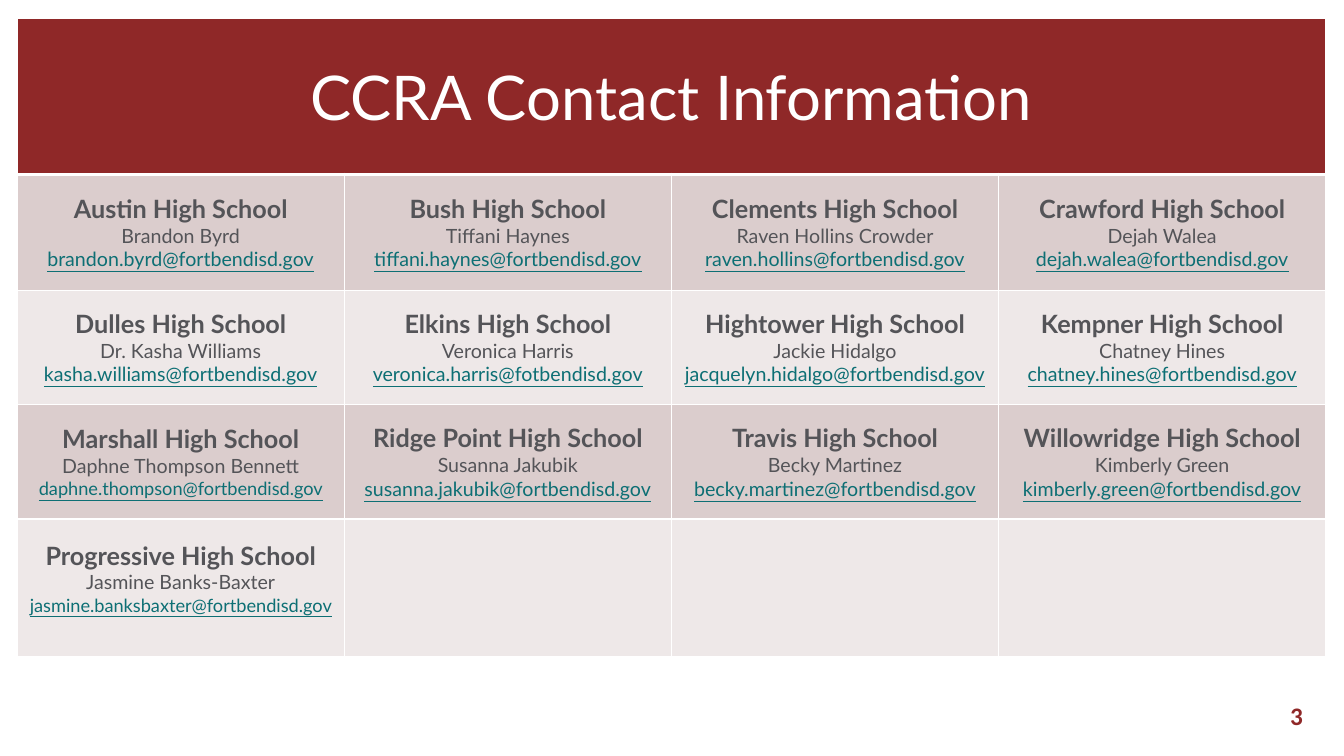
from lxml import etree
from pptx import Presentation
from pptx.dml.color import RGBColor
from pptx.enum.text import MSO_ANCHOR, PP_ALIGN
from pptx.oxml.ns import qn
from pptx.util import Inches, Pt

MAROON = RGBColor(0x8F, 0x28, 0x28)
WHITE = RGBColor(0xFF, 0xFF, 0xFF)
GRAY = RGBColor(0x54, 0x54, 0x58)
TEAL = RGBColor(0x0D, 0x6F, 0x74)
BANDS = (RGBColor(0xDB, 0xCD, 0xCD), RGBColor(0xEE, 0xE8, 0xE8))

COLS = 4
COL_WIDTH = 3.245
ROW_HEIGHTS = (1.55, 1.15, 1.13, 1.14, 1.36)

CONTACTS = (
    ("Austin High School", "Brandon Byrd", "brandon.byrd@fortbendisd.gov", 14),
    ("Bush High School", "Tiffani Haynes", "tiffani.haynes@fortbendisd.gov", 14),
    ("Clements High School", "Raven Hollins Crowder", "raven.hollins@fortbendisd.gov", 14),
    ("Crawford High School", "Dejah Walea", "dejah.walea@fortbendisd.gov", 14),
    ("Dulles High School", "Dr. Kasha Williams", "kasha.williams@fortbendisd.gov", 14),
    ("Elkins High School", "Veronica Harris", "veronica.harris@fotbendisd.gov", 14),
    ("Hightower High School", "Jackie Hidalgo", "jacquelyn.hidalgo@fortbendisd.gov", 14),
    ("Kempner High School", "Chatney Hines", "chatney.hines@fortbendisd.gov", 14),
    ("Marshall High School", "Daphne Thompson Bennett", "daphne.thompson@fortbendisd.gov", 13),
    ("Ridge Point High School", "Susanna Jakubik", "susanna.jakubik@fortbendisd.gov", 14),
    ("Travis High School", "Becky Martinez", "becky.martinez@fortbendisd.gov", 14),
    ("Willowridge High School", "Kimberly Green", "kimberly.green@fortbendisd.gov", 14),
    ("Progressive High School", "Jasmine Banks-Baxter", "jasmine.banksbaxter@fortbendisd.gov", 13),
)


def style(p, size, color, font="Lato", bold=False, underline=False, align=PP_ALIGN.CENTER):
    p.alignment = align
    p.font.name = font
    p.font.size = Pt(size)
    p.font.color.rgb = color
    p.font.bold = bold
    p.font.underline = underline


def style_cell(cell, fill, bottom_width=1):
    cell.vertical_anchor = MSO_ANCHOR.MIDDLE
    cell.fill.solid()
    cell.fill.fore_color.rgb = fill
    tc_pr = cell._tc.get_or_add_tcPr()
    widths = {"lnL": 1, "lnR": 1, "lnT": 1, "lnB": bottom_width}
    for i, (side, width) in enumerate(widths.items()):
        ln = etree.Element(qn(f"a:{side}"), w=str(Pt(width)))
        solid = etree.SubElement(ln, qn("a:solidFill"))
        etree.SubElement(solid, qn("a:srgbClr"), val=str(WHITE))
        tc_pr.insert(i, ln)


def fill_contact(cell, school, person, email, email_size):
    tf = cell.text_frame
    tf.text = "\n".join((school, person, email))
    school_p, person_p, email_p = tf.paragraphs
    style(school_p, 18, GRAY, bold=True)
    style(person_p, 14, GRAY)
    style(email_p, email_size, TEAL, underline=True)


def add_contact_table(slide):
    frame = slide.shapes.add_table(
        len(ROW_HEIGHTS), COLS, Inches(0.17), Inches(0.18),
        Inches(COLS * COL_WIDTH), Inches(sum(ROW_HEIGHTS)))
    table = frame.table
    for col in table.columns:
        col.width = Inches(COL_WIDTH)
    for row, height in zip(table.rows, ROW_HEIGHTS):
        row.height = Inches(height)

    for c in range(COLS):
        style_cell(table.cell(0, c), MAROON, bottom_width=3)
        for r in range(1, len(ROW_HEIGHTS)):
            style_cell(table.cell(r, c), BANDS[(r - 1) % 2])

    title = table.cell(0, 0)
    title.merge(table.cell(0, COLS - 1))
    title.text_frame.text = "CCRA Contact Information"
    style(title.text_frame.paragraphs[0], 44, WHITE)

    for i, contact in enumerate(CONTACTS):
        fill_contact(table.cell(1 + i // COLS, i % COLS), *contact)
    table.cell(len(ROW_HEIGHTS) - 1, 0).margin_bottom = Inches(0.24)


def add_page_number(slide, number):
    sp = slide.shapes.add_textbox(Inches(10.02), Inches(6.9), Inches(3), Inches(0.4))
    tf = sp.text_frame
    tf.word_wrap = True
    tf.vertical_anchor = MSO_ANCHOR.MIDDLE
    tf.text = number
    style(tf.paragraphs[0], 18, MAROON, font="Calibri", bold=True, align=PP_ALIGN.RIGHT)


def main():
    prs = Presentation()
    prs.slide_width = Inches(13.33)
    prs.slide_height = Inches(7.5)
    slide = prs.slides.add_slide(prs.slide_layouts[6])
    add_page_number(slide, "3")
    add_contact_table(slide)
    prs.save("out.pptx")


if __name__ == "__main__":
    main()
